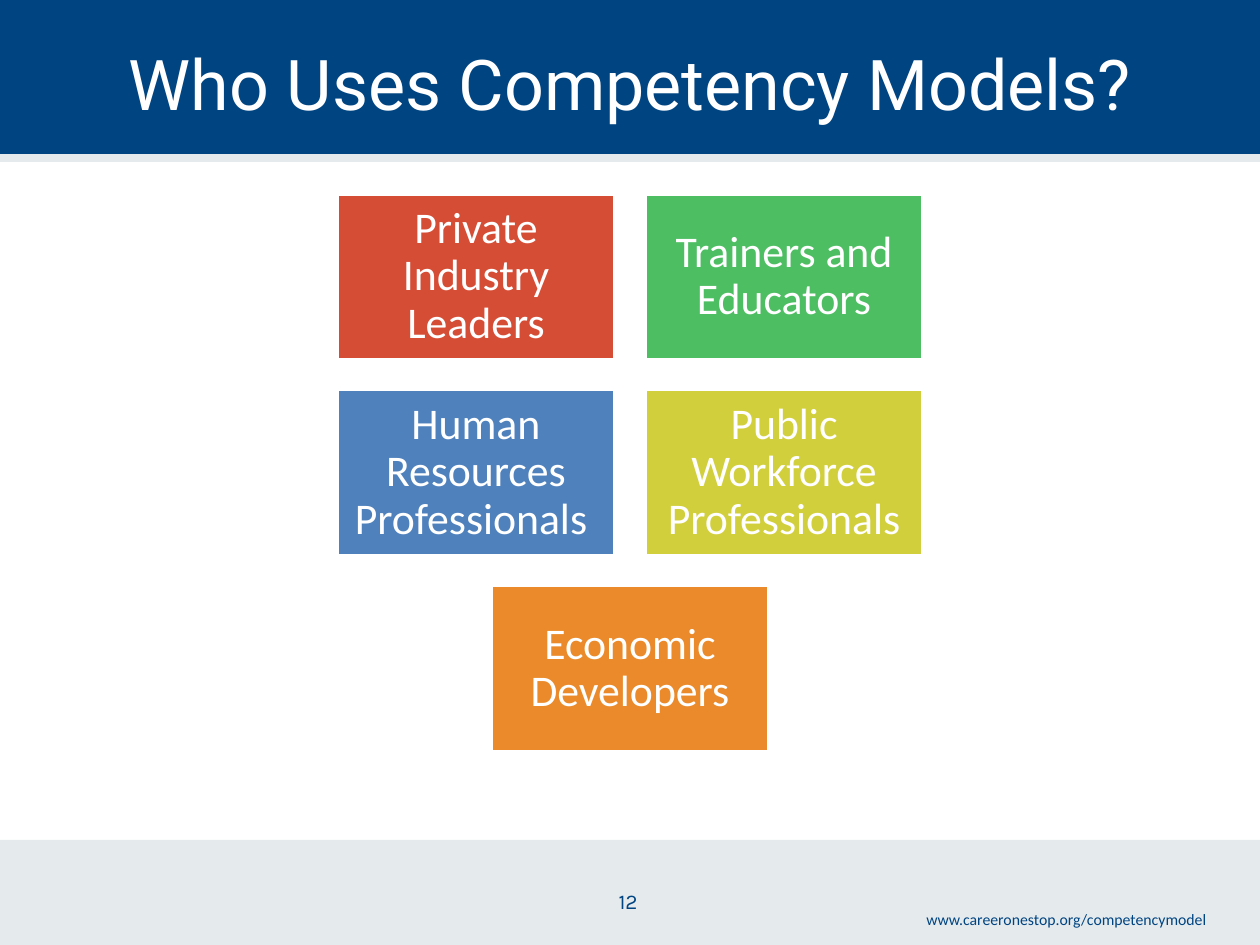
import pptx
import pptx.util
import pptx.dml.color
import pptx.enum.shapes
import pptx.enum.text
import pptx.oxml.ns
import lxml.etree

Cm, Pt = pptx.util.Cm, pptx.util.Pt
RGB = pptx.dml.color.RGBColor.from_string
ALIGN = pptx.enum.text.PP_ALIGN
MIDDLE = pptx.enum.text.MSO_ANCHOR.MIDDLE
RECT = pptx.enum.shapes.MSO_SHAPE.RECTANGLE

COLORS = {
    "white": "FFFFFF", "navy": "004481", "gray": "E5EAED",
    "red": "D64D36", "green": "4EBE63", "blue": "4F81BD",
    "yellow": "D2CF3D", "orange": "EA8A2A",
}

prs = pptx.Presentation()
prs.slide_width, prs.slide_height = Cm(25.4), Cm(19.05)
s = prs.slides.add_slide(prs.slide_layouts[5])


def add_rect(left, top, width, height, color):
    sp = s.shapes.add_shape(RECT, Cm(left), Cm(top), Cm(width), Cm(height))
    sp.shadow.inherit = False
    sp.fill.solid()
    sp.fill.fore_color.rgb = RGB(COLORS[color])
    sp.line.fill.background()
    return sp


def set_text(tf, text, font, size, color, align):
    p = tf.paragraphs[0]
    p.text = text
    p.alignment = align
    p.font.name = font
    p.font.size = Pt(size)
    p.font.color.rgb = RGB(COLORS[color])
    return p


# Footer and header bands
add_rect(0, 16.93, 25.4, 2.12, "gray")
add_rect(0, 0, 25.4, 3.18, "navy")
rule = s.shapes.add_connector(pptx.enum.shapes.MSO_CONNECTOR.STRAIGHT,
                              0, Cm(3.18), Cm(25.4), Cm(3.18))
rule.line.color.rgb = RGB(COLORS["gray"])
rule.line.width = Pt(4.5)
lxml.etree.SubElement(rule._element.spPr, pptx.oxml.ns.qn("a:effectLst"))

# Title, brought in front of the header band
title = s.shapes.title
title.left, title.top, title.width, title.height = Cm(1.27), Cm(0.43), Cm(22.86), Cm(2.46)
title.text_frame.vertical_anchor = MIDDLE
set_text(title.text_frame, "Who Uses Competency Models?", "Roboto", 40, "white", ALIGN.CENTER)
s.shapes._spTree.append(title._element)

# Page number and web address
footers = [
    ("12", 12.22, 17.78, 0.94, 0.76, "Karla", 12, ALIGN.LEFT, False),
    ("www.careeronestop.org/competencymodel", 17.78, 18.21, 6.78, 0.64,
     "Calibri", 9, ALIGN.RIGHT, True),
]
for text, left, top, width, height, font, size, align, wrap in footers:
    tf = s.shapes.add_textbox(Cm(left), Cm(top), Cm(width), Cm(height)).text_frame
    tf.word_wrap = wrap
    set_text(tf, text, font, size, "navy", align)

# User groups: rows of boxes, each row centred on the slide
rows = [
    [("Private Industry Leaders", "red"), ("Trainers and Educators", "green")],
    [("Human Resources Professionals ", "blue"), ("Public Workforce Professionals", "yellow")],
    [("Economic Developers", "orange")],
]
box_w, box_h, gap, first_top = 5.64, 3.38, 0.57, 3.89
for i, row in enumerate(rows):
    row_w = len(row) * (box_w + gap) - gap
    for j, (text, color) in enumerate(row):
        sp = add_rect((25.4 - row_w) / 2 + j * (box_w + gap),
                      first_top + i * (box_h + gap), box_w, box_h, color)
        sp.line.color.rgb = RGB(COLORS["white"])
        sp.line.width = Pt(3)
        tf = sp.text_frame
        tf.word_wrap = True
        tf.vertical_anchor = MIDDLE
        tf.margin_left = tf.margin_right = tf.margin_top = tf.margin_bottom = Cm(0.25)
        p = set_text(tf, text, "Calibri", 25, "white", ALIGN.CENTER)
        p.line_spacing = 0.9

prs.save("out.pptx")
